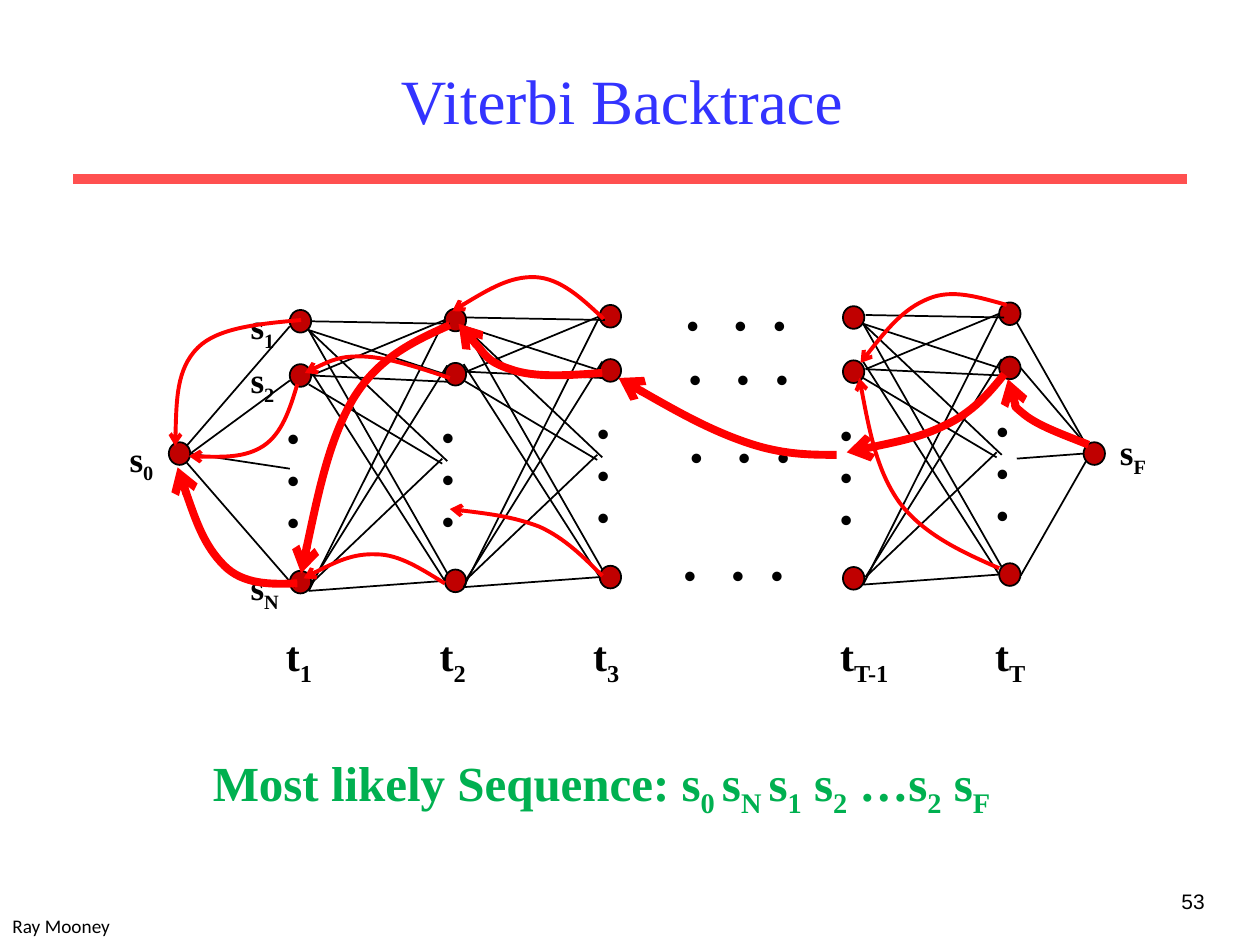
from lxml.etree import SubElement
from pptx import Presentation
from pptx.dml.color import RGBColor
from pptx.enum.shapes import MSO_CONNECTOR as Connector, MSO_SHAPE as Shape
from pptx.enum.text import MSO_ANCHOR as Anchor, PP_ALIGN as Align
from pptx.oxml.ns import qn
from pptx.util import Pt

EMU_PER_PX = 9144  # 100 px to the inch

BLACK = RGBColor(0x00, 0x00, 0x00)
TITLE_BLUE = RGBColor(0x33, 0x33, 0xFF)
RULE_RED = RGBColor(0xFF, 0x50, 0x50)
NODE_RED = RGBColor(0xC0, 0x00, 0x00)
ARROW_RED = RGBColor(0xFF, 0x00, 0x00)
ANSWER_GREEN = RGBColor(0x00, 0xB0, 0x50)

SERIF = "Times New Roman"
STATE_FONT = {"name": SERIF, "size": Pt(20), "bold": True}
TIME_FONT = {"name": SERIF, "size": Pt(24), "bold": True}
ANSWER_FONT = {"name": SERIF, "size": Pt(28), "bold": True}
TITLE_FONT = {"name": SERIF, "size": Pt(36)}
NUMBER_FONT = {"name": "Arial", "size": Pt(12)}
AUTHOR_FONT = {"name": "Calibri", "size": Pt(11)}

NODE_SIZE = (17, 18)
STATE_ROWS = (0, 43, 207)
COLUMNS = [(230, 246), (353, 245), (476, 242), (669, 243), (793, 240)]
START, FINAL = (134, 351), (860, 351)

# Transitions between two neighbouring columns, measured from a stage origin
STAGES = [(230, 246), (353, 243), (670, 241)]
TRANSITIONS = [
    (17, 9, 127, 11), (15, 16, 123, 51), (15, 16, 125, 209),
    (15, 16, 125, 120), (17, 52, 123, 8), (17, 52, 125, 57),
    (15, 46, 123, 215), (15, 223, 123, 8), (17, 217, 125, 44),
    (15, 223, 123, 215), (17, 217, 121, 118), (15, 59, 121, 122),
]
START_EDGES = [(148, 354, 230, 259), (151, 360, 230, 302),
               (148, 367, 234, 466), (151, 360, 230, 372)]
FINAL_EDGES = [(807, 256, 862, 353), (810, 292, 862, 353),
               (810, 457, 862, 366), (807, 364, 860, 360)]

# Subscript, left, top, width
STATE_LABELS = [("1", 189, 237, 41), ("2", 189, 280, 41), ("N", 189, 444, 46),
                ("0", 93, 342, 41), ("F", 879, 337, 44)]
# Subscript, left, width
TIME_LABELS = [("1", 217, 44), ("2", 339, 44), ("3", 461, 44),
               ("T-1", 657, 64), ("T", 780, 47)]
ELLIPSIS_ROWS = [(535, 236), (537, 279), (538, 341), (533, 434)]
ELLIPSIS_TABS = (38, 69)

# Each arrow: its start, then three points for each Bezier segment
BACKPOINTERS = [
    [(799, 242), (777, 236), (756, 229), (737, 237), (717, 245), (700, 266), (683, 288)],
    [(793, 451), (763, 438), (733, 424), (714, 399), (696, 374), (689, 337), (682, 300)],
    [(479, 253), (462, 237), (445, 221), (425, 220), (405, 219), (382, 233), (359, 247)],
    [(478, 457), (463, 442), (448, 427), (428, 418), (407, 410), (382, 407), (357, 404)],
    [(357, 300), (333, 292), (309, 284), (290, 283), (270, 282), (256, 289), (242, 296)],
    [(353, 463), (335, 452), (317, 440), (299, 440), (280, 439), (260, 449), (241, 459)],
    [(239, 254), (206, 257), (173, 260), (157, 276), (140, 293), (140, 324), (139, 354)],
    [(236, 305), (230, 325), (224, 344), (209, 354), (195, 363), (172, 363), (150, 362)],
]
BEST_PATH = [
    [(864, 353), (844, 345), (824, 338), (813, 329), (802, 320), (801, 311), (800, 301)],
    [(797, 297), (785, 312), (772, 327), (751, 337), (731, 347), (701, 353), (672, 359)],
    [(664, 361), (643, 361), (621, 361), (592, 351), (563, 341), (527, 321), (491, 300)],
    [(478, 296), (451, 298), (424, 300), (405, 293), (386, 287), (364, 257), (364, 257)],
    [(357, 258), (328, 271), (300, 284), (280, 317), (261, 350), (250, 403), (239, 455)],
    [(236, 463), (215, 464), (193, 464), (178, 449), (162, 433), (151, 402), (141, 371)],
]


def emu(*lengths):
    return [length * EMU_PER_PX for length in lengths]


def add_text(slide, box, paragraphs, font, color=BLACK, wrap=False, align=Align.LEFT):
    """Each paragraph is a list of parts; every second part is a subscript."""
    frame = slide.shapes.add_textbox(*emu(*box)).text_frame
    frame.word_wrap = wrap
    for index, parts in enumerate(paragraphs):
        paragraph = frame.add_paragraph() if index else frame.paragraphs[0]
        paragraph.alignment = align
        for position, part in enumerate(parts):
            run = paragraph.add_run()
            run.text = part
            for name, value in font.items():
                setattr(run.font, name, value)
            run.font.color.rgb = color
            if position % 2:
                run._r.get_or_add_rPr().set("baseline", "-25000")
    return frame


def add_ellipsis_row(slide, left, top):
    frame = add_text(slide, (left, top, 108, 44), [["•\t•\t•"]], STATE_FONT, wrap=True)
    tabs = SubElement(frame.paragraphs[0]._p.get_or_add_pPr(), qn("a:tabLst"))
    for stop in emu(*ELLIPSIS_TABS):
        SubElement(tabs, qn("a:tab"), pos=str(stop), algn="l")


def add_node(slide, left, top):
    node = slide.shapes.add_shape(Shape.OVAL, *emu(left, top, *NODE_SIZE))
    node.shadow.inherit = False
    node.fill.solid()
    node.fill.fore_color.rgb = NODE_RED
    node.line.color.rgb = BLACK
    node.line.width = Pt(1)


def add_column(slide, left, top):
    for row in STATE_ROWS:
        add_node(slide, left, top + row)
    add_text(slide, (left - 12, top + 80, 33, 111), [["•"]] * 3, STATE_FONT)


def add_edge(slide, ends, color=BLACK, width=1):
    edge = slide.shapes.add_connector(Connector.STRAIGHT, *emu(*ends))
    edge.line.color.rgb = color
    edge.line.width = Pt(width)
    SubElement(edge.element.spPr, qn("a:effectLst"))


def add_curved_arrow(slide, points, width):
    builder = slide.shapes.build_freeform(*points[0], scale=EMU_PER_PX)
    builder.add_line_segments(points[1:], close=False)
    arrow = builder.convert_to_shape()
    arrow.shadow.inherit = False
    arrow.fill.background()
    arrow.line.color.rgb = ARROW_RED
    arrow.line.width = Pt(width)
    properties = arrow.element.spPr
    SubElement(properties.find(qn("a:ln")), qn("a:tailEnd"), type="arrow")
    outline = next(properties.iter(qn("a:path")))
    steps = outline.findall(qn("a:lnTo"))
    for first in range(0, len(steps), 3):
        curve = SubElement(outline, qn("a:cubicBezTo"))
        for step in steps[first:first + 3]:
            curve.append(step[0])
            outline.remove(step)


def add_trellis(slide):
    for column in COLUMNS:
        add_column(slide, *column)
    for node in (START, FINAL):
        add_node(slide, *node)
    for state, left, top, width in STATE_LABELS:
        add_text(slide, (left, top, width, 44), [["s", state]], STATE_FONT)
    for x, y in STAGES:
        for x1, y1, x2, y2 in TRANSITIONS:
            add_edge(slide, (x + x1, y + y1, x + x2, y + y2))
    for ends in START_EDGES + FINAL_EDGES:
        add_edge(slide, ends)
    for row in ELLIPSIS_ROWS:
        add_ellipsis_row(slide, *row)
    for time, left, width in TIME_LABELS:
        add_text(slide, (left, 495, width, 50), [["t", time]], TIME_FONT)


def main():
    deck = Presentation()
    deck.slide_width, deck.slide_height = emu(1000, 750)
    slide = deck.slides.add_slide(deck.slide_layouts[6])

    add_edge(slide, (58, 142, 942, 142), RULE_RED, 6)
    title = add_text(slide, (75, 25, 850, 108), [["Viterbi Backtrace "]],
                     TITLE_FONT, TITLE_BLUE, wrap=True, align=Align.CENTER)
    title.vertical_anchor = Anchor.MIDDLE
    add_text(slide, (758, 700, 208, 50), [["53"]], NUMBER_FONT, wrap=True, align=Align.RIGHT)

    add_trellis(slide)
    for points in BACKPOINTERS:
        add_curved_arrow(slide, points, 2.25)
    for points in BEST_PATH:
        add_curved_arrow(slide, points, 4.5)

    sequence = ["Most likely Sequence: s", "0 ", "s", "N ", "s", "1", " s", "2",
                " …s", "2", " s", "F"]
    add_text(slide, (159, 592, 705, 57), [sequence], ANSWER_FONT, ANSWER_GREEN)
    add_text(slide, (0, 721, 99, 29), [["Ray Mooney"]], AUTHOR_FONT)
    deck.save("out.pptx")


if __name__ == "__main__":
    main()
